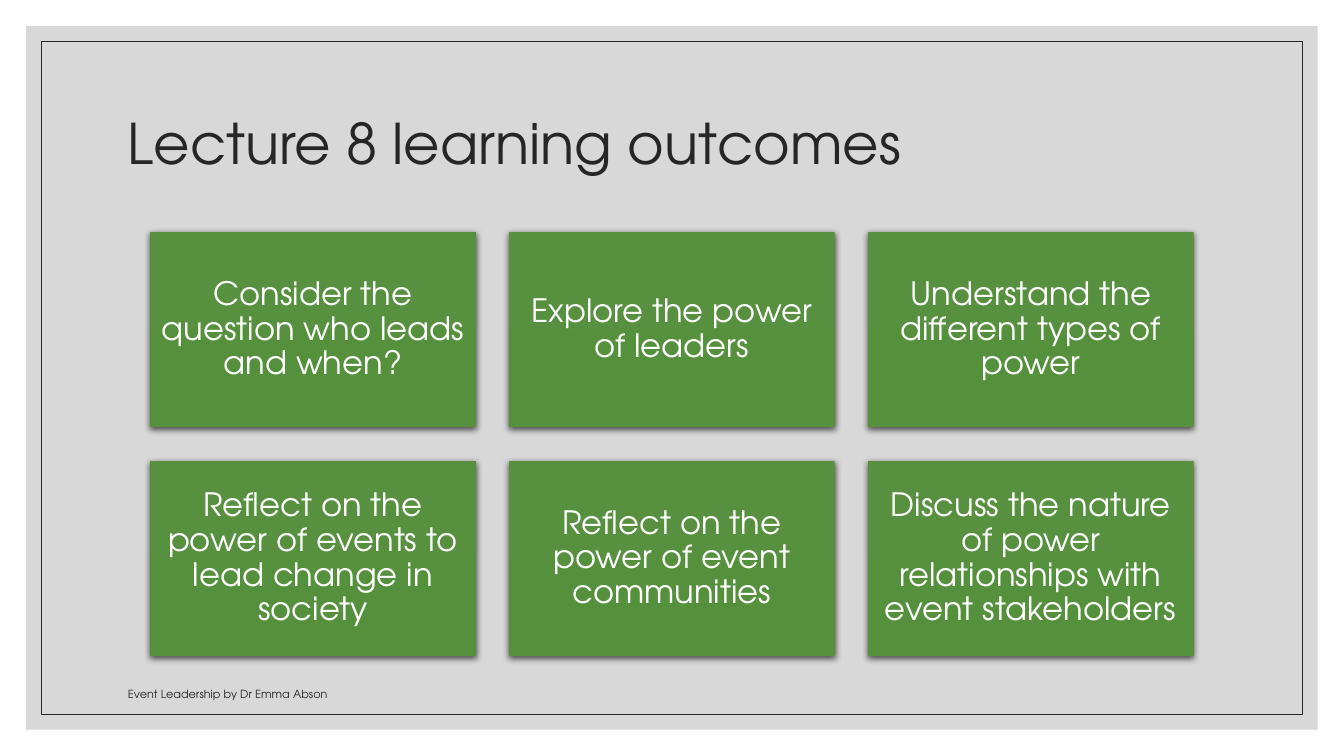
from lxml import etree
from pptx import Presentation
from pptx.dml.color import RGBColor
from pptx.enum.shapes import MSO_SHAPE
from pptx.enum.text import MSO_ANCHOR, PP_ALIGN
from pptx.oxml import parse_xml
from pptx.oxml.ns import qn
from pptx.util import Inches, Pt

TITLE = "Lecture 8 learning outcomes"
FOOTER = "Event Leadership by Dr Emma Abson"
OUTCOMES = [
    "Consider the question who leads and when?",
    "Explore the power of leaders",
    "Understand the different types of power",
    "Reflect on the power of events to lead change in society",
    "Reflect on the power of event communities",
    "Discuss the nature of power relationships with event stakeholders",
]

FONT = "TeX Gyre Adventor"
COLORS = {
    "ink": "262626",
    "panel": "BFBFBF",
    "card_top": "57903F",
    "card_bottom": "55913C",
    "card_text": "FFFFFF",
}
SLIDE_WIDTH, SLIDE_HEIGHT = 13.33, 7.5
PANEL_MARGIN, BORDER_MARGIN = 0.26, 0.41
TEXT_LEFT = 1.17
COLUMNS = 3
GRID_LEFT, GRID_TOP = 1.49, 2.3
CARD_WIDTH, CARD_HEIGHT, GAP = 3.23, 1.94, 0.33

CARD_SHADOW = (
    '<a:outerShdw xmlns:a="http://schemas.openxmlformats.org/drawingml/2006/main"'
    ' blurRad="57150" dist="19050" dir="5400000" algn="ctr" rotWithShape="0">'
    '<a:srgbClr val="000000"><a:alpha val="63000"/></a:srgbClr></a:outerShdw>'
)


def rgb(name):
    return RGBColor.from_string(COLORS[name])


def add_rectangle(slide, left, top, width, height):
    shape = slide.shapes.add_shape(
        MSO_SHAPE.RECTANGLE, Inches(left), Inches(top), Inches(width), Inches(height)
    )
    shape.shadow.inherit = False
    shape.line.fill.background()
    return shape


def add_inset_rectangle(slide, margin):
    """Add a rectangle at the same distance from all four slide edges."""
    return add_rectangle(
        slide, margin, margin, SLIDE_WIDTH - 2 * margin, SLIDE_HEIGHT - 2 * margin
    )


def write_text(shape, text, size, color, anchor, align=PP_ALIGN.LEFT, spacing=1.0):
    frame = shape.text_frame
    frame.word_wrap = True
    frame.vertical_anchor = anchor
    paragraph = frame.paragraphs[0]
    paragraph.alignment = align
    paragraph.line_spacing = spacing
    run = paragraph.add_run()
    run.text = text
    run.font.name = FONT
    run.font.size = Pt(size)
    run.font.color.rgb = rgb(color)


def add_frame(slide):
    panel = add_inset_rectangle(slide, PANEL_MARGIN)
    panel.fill.solid()
    panel.fill.fore_color.rgb = rgb("panel")
    panel_color = panel.fill._xPr.find(qn("a:solidFill"))[0]
    etree.SubElement(panel_color, qn("a:alpha"), val="60000")

    border = add_inset_rectangle(slide, BORDER_MARGIN)
    border.fill.background()
    border.line.color.rgb = rgb("ink")
    border.line.width = Pt(0.5)


def add_card(slide, index, text):
    row, column = divmod(index, COLUMNS)
    card = add_rectangle(
        slide,
        GRID_LEFT + column * (CARD_WIDTH + GAP),
        GRID_TOP + row * (CARD_HEIGHT + GAP),
        CARD_WIDTH,
        CARD_HEIGHT,
    )
    card.fill.gradient()
    card.fill.gradient_angle = 270
    for stop, color in zip(card.fill.gradient_stops, ("card_top", "card_bottom")):
        stop.color.rgb = rgb(color)
    card._element.spPr.find(qn("a:effectLst")).append(parse_xml(CARD_SHADOW))
    frame = card.text_frame
    frame.margin_left = frame.margin_right = Inches(0.1)
    frame.margin_top = frame.margin_bottom = Inches(0.1)
    write_text(card, text, 23, "card_text", MSO_ANCHOR.MIDDLE, PP_ALIGN.CENTER, 0.9)


def main():
    presentation = Presentation()
    presentation.slide_width = Inches(SLIDE_WIDTH)
    presentation.slide_height = Inches(SLIDE_HEIGHT)
    slide = presentation.slides.add_slide(presentation.slide_layouts[6])

    add_frame(slide)
    title = slide.shapes.add_textbox(
        Inches(TEXT_LEFT), Inches(0.7), Inches(11), Inches(1.5)
    )
    write_text(title, TITLE, 40, "ink", MSO_ANCHOR.MIDDLE, spacing=0.9)
    footer = slide.shapes.add_textbox(
        Inches(TEXT_LEFT), Inches(6.6), Inches(6.36), Inches(0.4)
    )
    write_text(footer, FOOTER, 8, "ink", MSO_ANCHOR.BOTTOM)
    for index, outcome in enumerate(OUTCOMES):
        add_card(slide, index, outcome)

    presentation.save("out.pptx")


if __name__ == "__main__":
    main()
